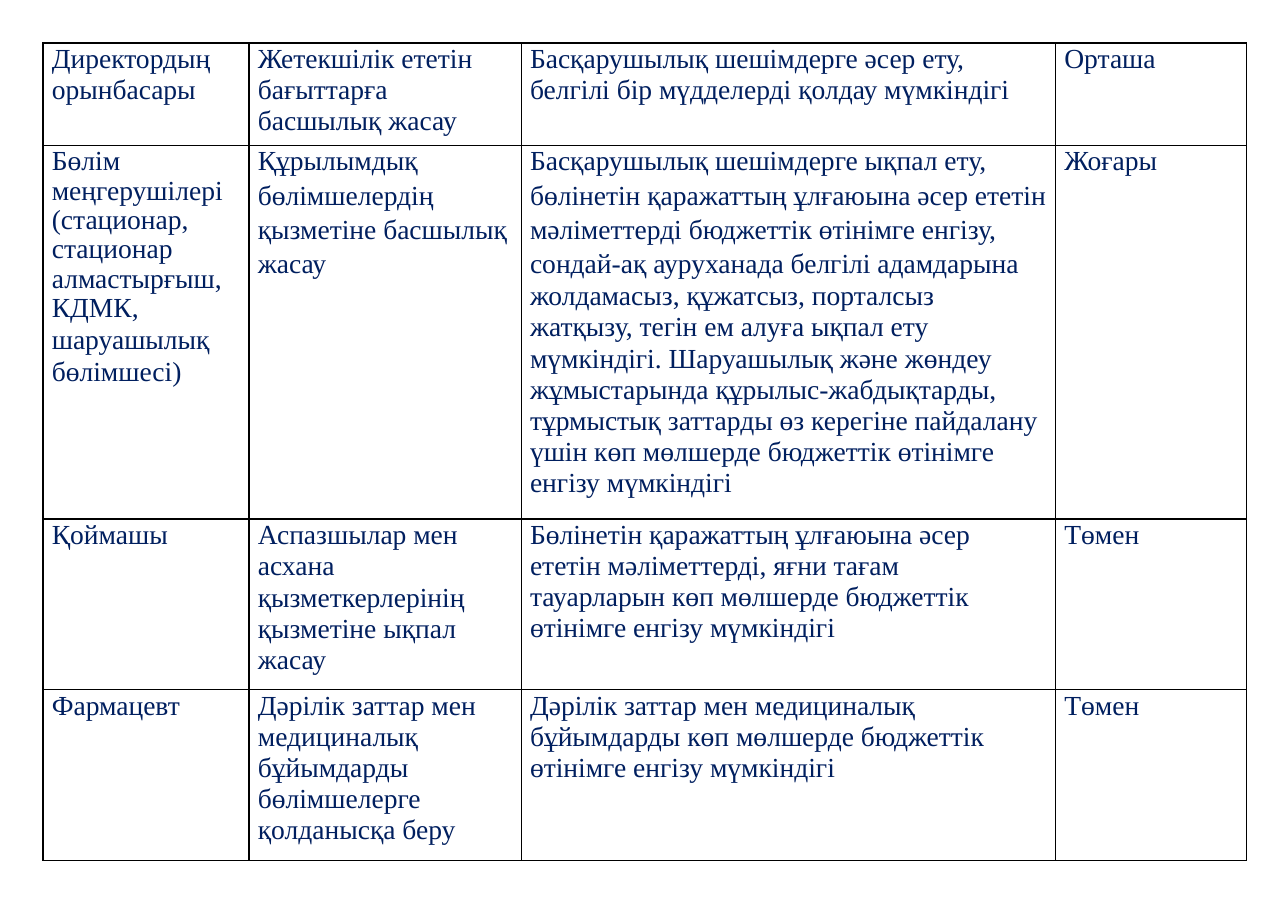
"""Builds a slide with a table of posts, duties, risks and risk levels."""
from dataclasses import dataclass

from lxml.etree import SubElement
from pptx import Presentation
from pptx.dml.color import RGBColor
from pptx.enum.text import MSO_ANCHOR, PP_ALIGN
from pptx.oxml.ns import qn
from pptx.slide import Slide
from pptx.table import Table, _Cell
from pptx.util import Emu, Inches, Pt

SLIDE_WIDTH = Inches(11.69)
SLIDE_HEIGHT = Inches(8.27)
TABLE_LEFT = 3.34
TABLE_TOP = 4.72
COLUMN_WIDTHS = (16.0, 21.13, 41.49, 14.8)
ROW_HEIGHTS = (11.25, 40.99, 18.74, 18.74)


@dataclass(frozen=True)
class Theme:
    font: str = "Times New Roman"
    size: Pt = Pt(18)
    text: RGBColor = RGBColor(0x00, 0x1F, 0x5F)
    border: str = "000000"
    border_width: Pt = Pt(1)
    indent: Emu = Inches(0.08)


@dataclass(frozen=True)
class Line:
    text: str
    spacing: Pt | float = 1.0
    before: float = 0.5


THEME = Theme()
UPPER = Pt(20.4)
LOWER = Pt(20.6)
LOOSE = Pt(22.1)

ROWS: tuple[tuple[tuple[Line, ...], ...], ...] = (
    (
        (Line("Директордың", UPPER, 0), Line("орынбасары")),
        (Line("Жетекшілік ететін", UPPER, 0), Line("бағыттарға"), Line("басшылық жасау")),
        (Line("Басқарушылық шешімдерге әсер ету,", UPPER, 0),
         Line("белгілі бір мүдделерді қолдау мүмкіндігі")),
        (Line("Орташа", UPPER, 0),),
    ),
    (
        (Line("Бөлім", Pt(20.1), 0),
         Line("меңгерушілері (стационар, стационар алмастырғыш, КДМК,", 0.96),
         Line("шаруашылық бөлімшесі)", LOWER, 0.6)),
        (Line("Құрылымдық", UPPER, 0),
         Line("бөлімшелердің қызметіне басшылық жасау", LOOSE, 0.8)),
        (Line("Басқарушылық шешімдерге ықпал ету,", UPPER, 0),
         Line("бөлінетін қаражаттың ұлғаюына әсер ететін мәліметтерді бюджеттік "
              "өтінімге енгізу, сондай-ақ ауруханада белгілі адамдарына", LOOSE, 0.8),
         Line("жолдамасыз, құжатсыз, порталсыз", Pt(21.2), 0),
         Line("жатқызу, тегін ем алуға ықпал ету мүмкіндігі. Шаруашылық және жөндеу "
              "жұмыстарында құрылыс-жабдықтарды, тұрмыстық заттарды өз керегіне "
              "пайдалану үшін көп мөлшерде бюджеттік өтінімге", 1.02, 0),
         Line("енгізу мүмкіндігі")),
        (Line("Жоғары", UPPER, 0),),
    ),
    (
        (Line("Қоймашы", LOWER, 0),),
        (Line("Аспазшылар мен", LOWER, 0), Line("асхана"),
         Line("қызметкерлерінің қызметіне ықпал жасау", 1.02, 0.1)),
        (Line("Бөлінетін қаражаттың ұлғаюына әсер", LOWER, 0),
         Line("ететін мәліметтерді, яғни тағам"),
         Line("тауарларын көп мөлшерде бюджеттік өтінімге енгізу мүмкіндігі", 1.01, 0.2)),
        (Line("Төмен", LOWER, 0),),
    ),
    (
        (Line("Фармацевт", LOWER, 0),),
        (Line("Дәрілік заттар мен", LOWER, 0),
         Line("медициналық бұйымдарды бөлімшелерге қолданысқа беру", 1.02, 0)),
        (Line("Дәрілік заттар мен медициналық", LOWER, 0),
         Line("бұйымдарды көп мөлшерде бюджеттік өтінімге енгізу мүмкіндігі", 1.02, 0)),
        (Line("Төмен", LOWER, 0),),
    ),
)


def across(percent: float) -> Emu:
    return Emu(round(SLIDE_WIDTH * percent / 100))


def down(percent: float) -> Emu:
    return Emu(round(SLIDE_HEIGHT * percent / 100))


def draw_borders(cell: _Cell) -> None:
    properties = cell._tc.get_or_add_tcPr()
    for side in ("a:lnL", "a:lnR", "a:lnT", "a:lnB"):
        border = SubElement(properties, qn(side), w=str(int(THEME.border_width)))
        fill = SubElement(border, qn("a:solidFill"))
        SubElement(fill, qn("a:srgbClr"), val=THEME.border)


def write_lines(cell: _Cell, lines: tuple[Line, ...]) -> None:
    frame = cell.text_frame
    for index, line in enumerate(lines):
        paragraph = frame.add_paragraph() if index else frame.paragraphs[0]
        paragraph.text = line.text
        paragraph.alignment = PP_ALIGN.LEFT
        paragraph.line_spacing = line.spacing
        paragraph.space_before = Pt(line.before)
        paragraph.font.name = THEME.font
        paragraph.font.size = THEME.size
        paragraph.font.color.rgb = THEME.text
        paragraph._p.get_or_add_pPr().set("marL", str(int(THEME.indent)))


def fill_cell(cell: _Cell, lines: tuple[Line, ...]) -> None:
    cell.margin_left = cell.margin_right = cell.margin_top = cell.margin_bottom = 0
    cell.vertical_anchor = MSO_ANCHOR.TOP
    draw_borders(cell)
    cell.fill.background()
    write_lines(cell, lines)


def add_risk_table(slide: Slide) -> Table:
    shape = slide.shapes.add_table(
        len(ROW_HEIGHTS), len(COLUMN_WIDTHS), across(TABLE_LEFT), down(TABLE_TOP),
        across(sum(COLUMN_WIDTHS)), down(sum(ROW_HEIGHTS)))
    table = shape.table
    table.first_row = table.horz_banding = False
    for column, width in zip(table.columns, COLUMN_WIDTHS):
        column.width = across(width)
    for row, height, contents in zip(table.rows, ROW_HEIGHTS, ROWS):
        row.height = down(height)
        for cell, lines in zip(row.cells, contents):
            fill_cell(cell, lines)
    return table


def main() -> None:
    presentation = Presentation()
    presentation.slide_width = SLIDE_WIDTH
    presentation.slide_height = SLIDE_HEIGHT
    slide = presentation.slides.add_slide(presentation.slide_layouts[6])
    add_risk_table(slide)
    presentation.save("out.pptx")


if __name__ == "__main__":
    main()
